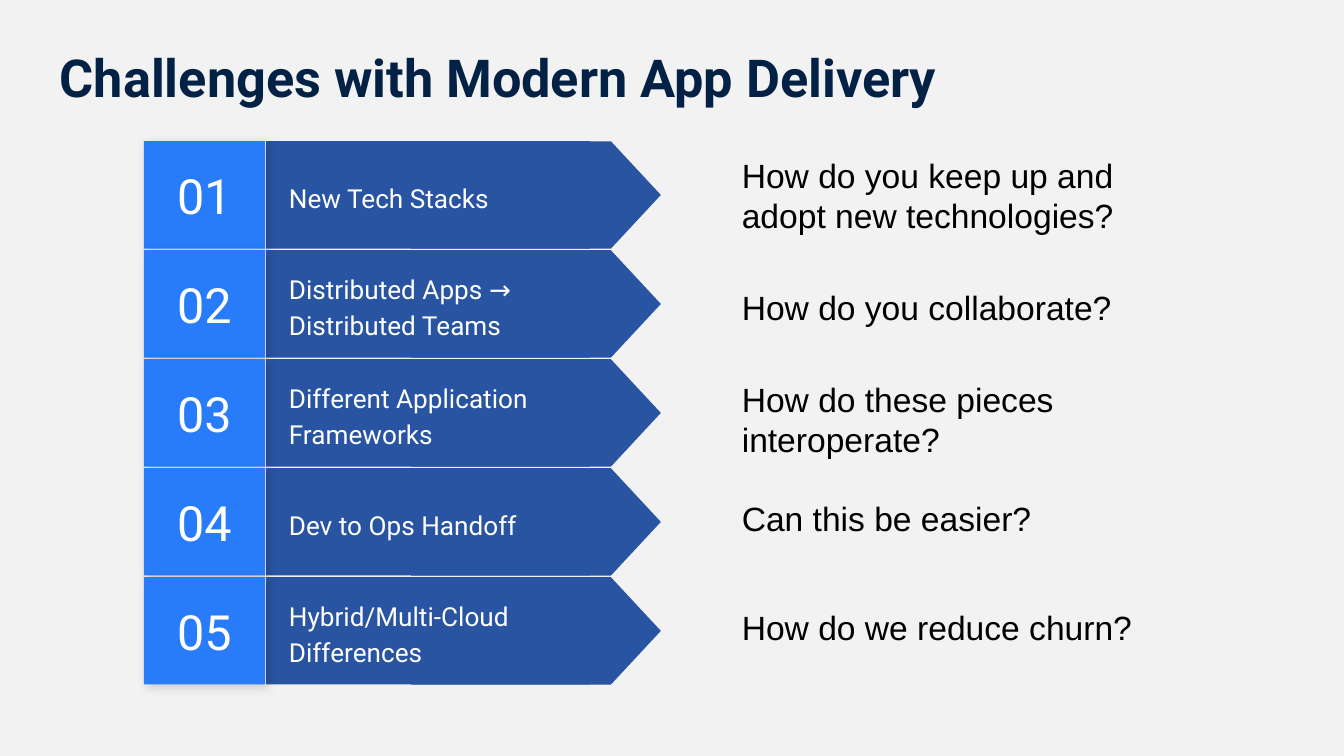
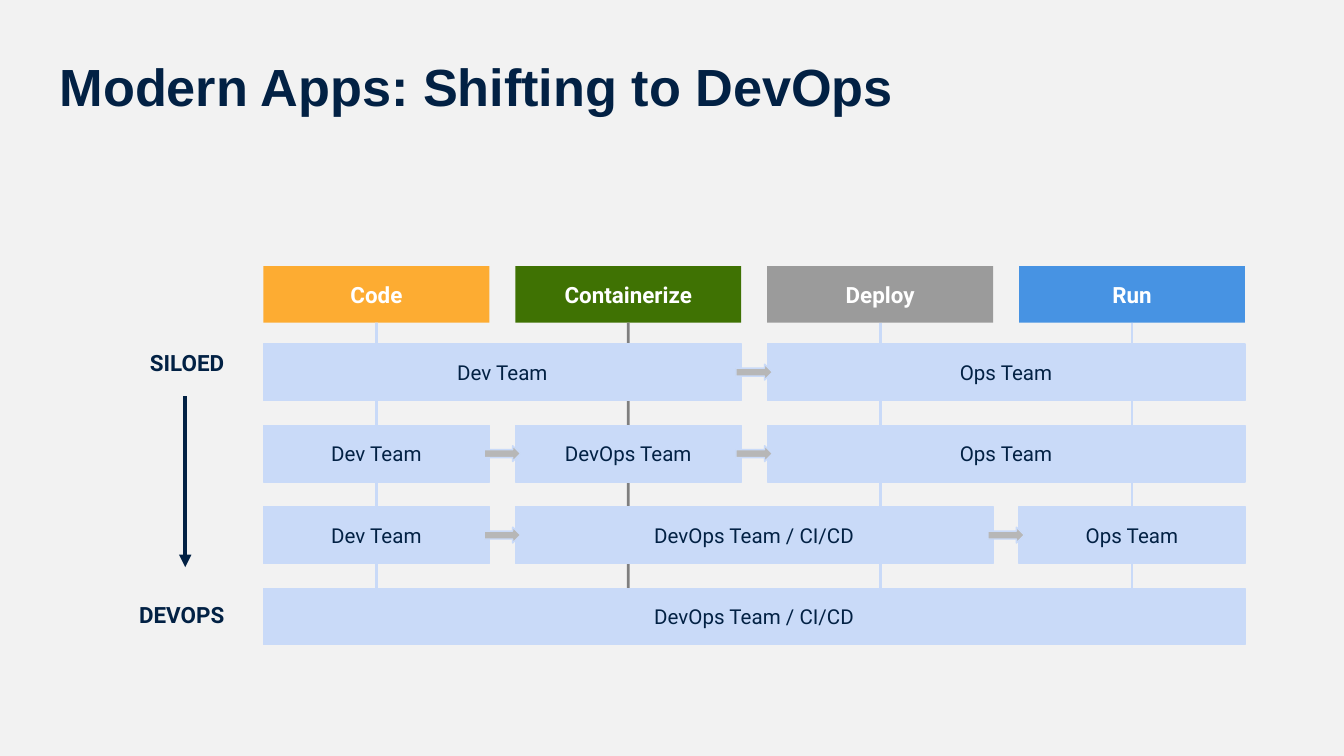
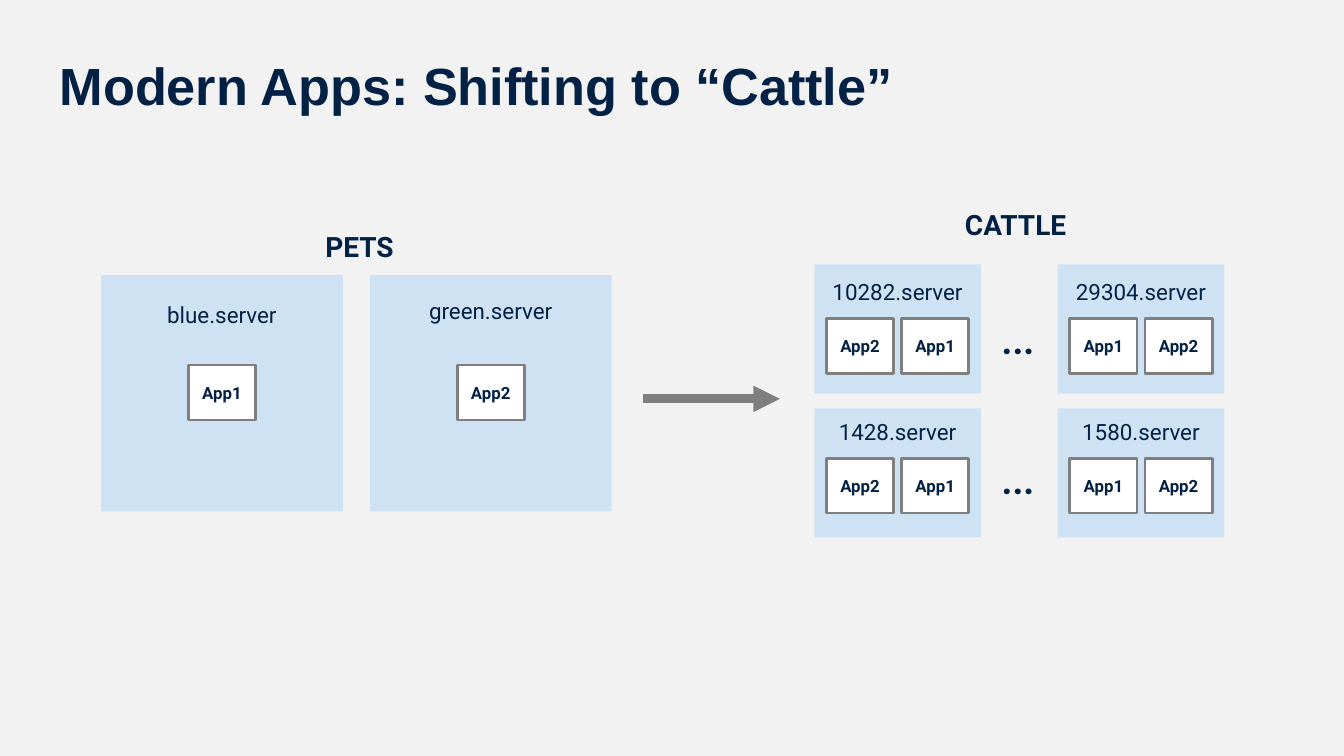
from dataclasses import dataclass
from typing import Optional

from lxml.etree import SubElement
from pptx import Presentation
from pptx.dml.color import RGBColor
from pptx.enum.shapes import MSO_CONNECTOR, MSO_SHAPE
from pptx.enum.text import MSO_ANCHOR, PP_ALIGN
from pptx.oxml.ns import qn
from pptx.util import Cm, Pt


@dataclass(frozen=True)
class Theme:
    # Colours
    page: str = "F2F2F2"
    ink: str = "022144"
    black: str = "000000"
    white: str = "FFFFFF"
    navy: str = "2854A1"
    blue: str = "287CF9"
    pale: str = "C9DAF8"
    sky: str = "CFE2F3"
    grey: str = "7F7F7F"
    mist: str = "B7B7B7"
    amber: str = "FDAC32"
    green: str = "3F7203"
    stone: str = "9B9B9B"
    azure: str = "4793E3"
    # Fonts and type sizes
    sans: str = "Roboto"
    plain: str = "Arial"
    title: float = 28
    number: float = 26
    dots: float = 20
    query: float = 18
    group: float = 15
    step: float = 14
    label: float = 12
    team: float = 11
    app: float = 9


T = Theme()


@dataclass(frozen=True)
class Area:
    left: float
    top: float
    wide: float
    high: float

    def cm(self) -> tuple:
        return Cm(self.left), Cm(self.top), Cm(self.wide), Cm(self.high)


@dataclass(frozen=True)
class Style:
    size: float
    color: str = T.ink
    bold: bool = False
    font: str = T.sans
    align: PP_ALIGN = PP_ALIGN.CENTER
    anchor: MSO_ANCHOR = MSO_ANCHOR.MIDDLE
    inset: float = 0.18
    space: Optional[float] = None


@dataclass(frozen=True)
class Step:
    name: str
    query: str
    area: Area
    anchor: MSO_ANCHOR = MSO_ANCHOR.TOP


@dataclass(frozen=True)
class Stage:
    name: str
    fill: str
    line: str = T.pale


@dataclass(frozen=True)
class Team:
    name: str
    row: int
    col: int
    span: int


@dataclass(frozen=True)
class Server:
    name: str
    area: Area
    drop: float
    app_drop: float
    apps: tuple


# Shared drawing

def rgb(code: str) -> RGBColor:
    return RGBColor.from_string(code)


def write(shape, text: str, style: Style) -> None:
    frame = shape.text_frame
    frame.word_wrap = True
    frame.vertical_anchor = style.anchor
    frame.margin_left = frame.margin_right = Cm(style.inset)
    frame.margin_top = frame.margin_bottom = Cm(style.inset)
    para = frame.paragraphs[0]
    para.text = text
    para.alignment = style.align
    if style.space:
        para.line_spacing = style.space
    font = para.font
    font.name = style.font
    font.size = Pt(style.size)
    font.bold = style.bold
    font.color.rgb = rgb(style.color)


def add_text(slide, area: Area, text: str, style: Style) -> None:
    write(slide.shapes.add_textbox(*area.cm()), text, style)


def add_box(slide, area: Area, fill: str, line: Optional[str] = None,
            width: float = 0.75, kind: MSO_SHAPE = MSO_SHAPE.RECTANGLE):
    box = slide.shapes.add_shape(kind, *area.cm())
    box.shadow.inherit = False
    box.fill.solid()
    box.fill.fore_color.rgb = rgb(fill)
    if line:
        box.line.color.rgb = rgb(line)
        box.line.width = Pt(width)
    else:
        box.line.fill.background()
    return box


def add_line(slide, start: tuple, end: tuple, color: str, width: float,
             head: bool = False):
    line = slide.shapes.add_connector(
        MSO_CONNECTOR.STRAIGHT, *map(Cm, start + end))
    line.line.color.rgb = rgb(color)
    line.line.width = Pt(width)
    props = line._element.spPr
    if head:
        SubElement(props.find(qn("a:ln")), qn("a:tailEnd"), type="triangle")
    SubElement(props, qn("a:effectLst"))
    return line


def add_shadow(shape) -> None:
    effects = shape._element.spPr.find(qn("a:effectLst"))
    outer = SubElement(effects, qn("a:outerShdw"), blurRad=str(Pt(5.6)),
                       dist=str(Pt(2.2)), dir="2700000", rotWithShape="0")
    color = SubElement(outer, qn("a:srgbClr"), val=T.black)
    SubElement(color, qn("a:alpha"), val="17000")


def new_slide(deck, title: str, top: float, font: str = T.plain):
    slide = deck.slides.add_slide(deck.slide_layouts[6])
    add_text(slide, Area(0.88, top, 23.67, 1.6), title,
             Style(T.title, bold=True, font=font, align=PP_ALIGN.LEFT,
                   anchor=MSO_ANCHOR.TOP, inset=0.25))
    return slide


# Slide 1: numbered challenges and their questions

STEPS = (
    Step("New Tech Stacks", "How do you keep up and adopt new technologies?",
         Area(13.77, 2.67, 8.08, 2.04)),
    Step("Distributed Apps → Distributed Teams", "How do you collaborate?",
         Area(13.77, 4.78, 7.62, 2.04), MSO_ANCHOR.MIDDLE),
    Step("Different Application Frameworks", "How do these pieces interoperate?",
         Area(13.77, 6.91, 9.19, 0.97)),
    Step("Dev to Ops Handoff", "Can this be easier?",
         Area(13.77, 9.17, 9.19, 0.97)),
    Step("Hybrid/Multi-Cloud Differences", "How do we reduce churn?",
         Area(13.77, 11.23, 9.19, 0.97)),
)


def draw_steps(deck) -> None:
    slide = new_slide(deck, "Challenges with Modern App Delivery", 0.61, T.sans)
    high, pitch = 2.03, 2.06
    tip_mid, tip_len = 10.13, 4.72
    name_style = Style(T.step, T.white, align=PP_ALIGN.LEFT, inset=0.25,
                       space=1.15)
    for i, step in enumerate(STEPS):
        top = 2.67 + i * pitch
        add_box(slide, Area(5.03, top, 6.12, high), T.navy)
        tip = add_box(
            slide, Area(tip_mid - high / 2, top + (high - tip_len) / 2,
                        high, tip_len),
            T.navy, kind=MSO_SHAPE.FLOWCHART_OFFPAGE_CONNECTOR)
        tip.rotation = 270
        add_text(slide, Area(5.21, top + 0.25, 6.45, 1.55), step.name,
                 name_style)
        number = add_box(slide, Area(2.72, top, 2.29, high), T.blue)
        add_shadow(number)
        write(number, f"{i + 1:02}", Style(T.number, T.white, inset=0.25))
        add_text(slide, step.area, step.query,
                 Style(T.query, T.black, font=T.plain, align=PP_ALIGN.LEFT,
                       anchor=step.anchor, inset=0.25))


# Slide 2: teams across the delivery stages

STAGES = (
    Stage("Code", T.amber),
    Stage("Containerize", T.green, T.grey),
    Stage("Deploy", T.stone),
    Stage("Run", T.azure),
)
TEAMS = (
    Team("Dev Team", 0, 0, 2),
    Team("Ops Team", 0, 2, 2),
    Team("Dev Team", 1, 0, 1),
    Team("DevOps Team", 1, 1, 1),
    Team("Ops Team", 1, 2, 2),
    Team("Dev Team", 2, 0, 1),
    Team("DevOps Team / CI/CD", 2, 1, 2),
    Team("Ops Team", 2, 3, 1),
    Team("DevOps Team / CI/CD", 3, 0, 4),
)


def draw_teams(deck) -> None:
    slide = new_slide(deck, "Modern Apps: Shifting to DevOps", 0.78)
    wide, high = 4.27, 1.07
    step_x, step_y = 4.76, 1.54
    left, top = 4.98, 6.5
    gap = step_x - wide

    # Stage headers with their guide lines
    for i, stage in enumerate(STAGES):
        x = left + i * step_x
        head = add_box(slide, Area(x, 5.03, wide, high), stage.fill)
        write(head, stage.name, Style(T.label, T.white, bold=True))
        mid = x + wide / 2
        guide = add_line(slide, (mid, 5.03 + high), (mid, top + 3 * step_y),
                         stage.line, 1.5)
        guide.begin_connect(head, 2)

    # Team bars
    for team in TEAMS:
        area = Area(left + team.col * step_x, top + team.row * step_y,
                    wide + (team.span - 1) * step_x, high)
        write(add_box(slide, area, T.pale, T.pale), team.name, Style(T.team))

    # Handoff arrows in the gaps between bars
    long, thick = 0.69, 0.3
    for team in TEAMS:
        if team.col:
            x = left + team.col * step_x - (gap + long) / 2
            y = top + team.row * step_y + (high - thick) / 2
            add_box(slide, Area(x, y, long, thick), T.mist, T.pale,
                    kind=MSO_SHAPE.RIGHT_ARROW)

    # Scale from siloed to shared work
    for text, y in (("SILOED", 6.2), ("DEVOPS", 10.95)):
        add_text(slide, Area(0.5, y, 3.92, 1.32), text,
                 Style(T.label, bold=True, align=PP_ALIGN.RIGHT))
    add_line(slide, (3.5, 7.49), (3.5, 10.72), T.ink, 2.25, head=True)


# Slide 3: named servers against numbered ones

SERVERS = (
    Server("blue.server", Area(1.91, 5.2, 4.57, 4.47), 0.43, 1.7, ("App1",)),
    Server("green.server", Area(6.99, 5.2, 4.57, 4.47), 0.36, 1.7, ("App2",)),
    Server("10282.server", Area(15.39, 5, 3.15, 2.44), 0.2, 1.02,
           ("App2", "App1")),
    Server("29304.server", Area(19.99, 5, 3.15, 2.44), 0.2, 1.02,
           ("App1", "App2")),
    Server("1428.server", Area(15.39, 7.72, 3.15, 2.44), 0.13, 0.94,
           ("App2", "App1")),
    Server("1580.server", Area(19.99, 7.72, 3.15, 2.44), 0.13, 0.94,
           ("App1", "App2")),
)


def draw_server(slide, server: Server) -> None:
    area = server.area
    add_box(slide, area, T.sky)
    mid = area.left + area.wide / 2
    tag = 2.7
    add_text(slide, Area(mid - tag / 2, area.top + server.drop, tag, 0.61),
             server.name, Style(T.label, anchor=MSO_ANCHOR.TOP, inset=0.06))
    wide, gap = 1.27, 0.15
    count = len(server.apps)
    start = mid - (count * wide + (count - 1) * gap) / 2
    for i, app in enumerate(server.apps):
        spot = Area(start + i * (wide + gap), area.top + server.app_drop,
                    wide, 1.04)
        write(add_box(slide, spot, T.white, T.grey, 1.5), app,
              Style(T.app, bold=True))


def draw_servers(deck) -> None:
    slide = new_slide(deck, "Modern Apps: Shifting to “Cattle”", 0.75)
    for server in SERVERS:
        draw_server(slide, server)
    for text, x, y in (("PETS", 4.8, 4.15), ("CATTLE", 17.2, 3.74)):
        add_text(slide, Area(x, y, 3.99, 1.19), text,
                 Style(T.group, bold=True, anchor=MSO_ANCHOR.TOP))
    for y in (5.82, 8.46):
        add_text(slide, Area(18.72, y, 1.04, 1.45), "...",
                 Style(T.dots, bold=True, anchor=MSO_ANCHOR.TOP))
    add_line(slide, (12.15, 7.54), (14.74, 7.54), T.grey, 4.75, head=True)


def main() -> None:
    deck = Presentation()
    deck.slide_width, deck.slide_height = Cm(25.4), Cm(14.29)
    page = deck.slide_master.background.fill
    page.solid()
    page.fore_color.rgb = rgb(T.page)
    draw_steps(deck)
    draw_teams(deck)
    draw_servers(deck)
    deck.save("out.pptx")


if __name__ == "__main__":
    main()
